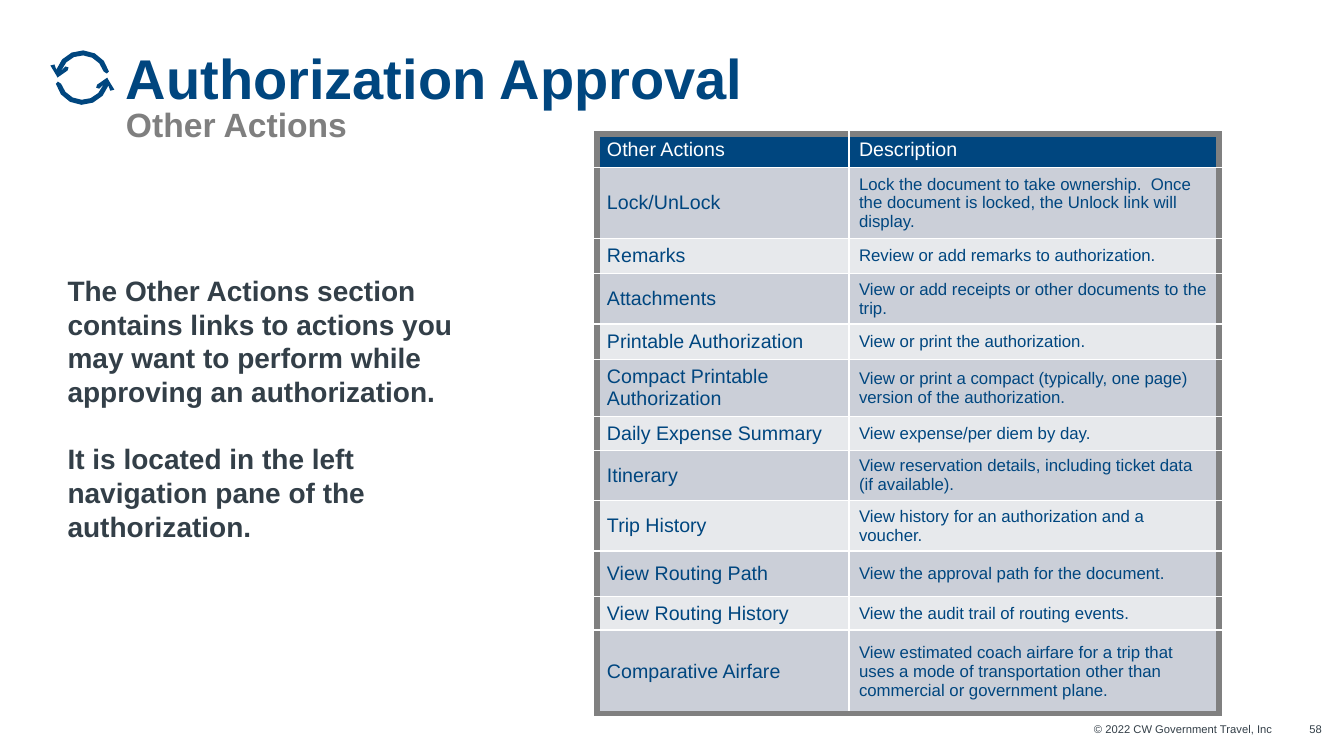
from math import cos, radians, sin

from lxml import etree
from pptx import Presentation
from pptx.dml.color import RGBColor
from pptx.enum.text import MSO_ANCHOR, PP_ALIGN
from pptx.oxml.ns import qn
from pptx.util import Inches, Pt

TOP, MIDDLE = MSO_ANCHOR.TOP, MSO_ANCHOR.MIDDLE
LEFT, RIGHT = PP_ALIGN.LEFT, PP_ALIGN.RIGHT

NAVY = RGBColor(0x00, 0x46, 0x7F)
GRAY = RGBColor(0x80, 0x80, 0x80)
SUBTITLE_GRAY = RGBColor(0x7F, 0x7F, 0x7F)
SLATE = RGBColor(0x33, 0x3F, 0x48)
WHITE = RGBColor(0xFF, 0xFF, 0xFF)
BAND_DARK = RGBColor(0xCB, 0xCF, 0xD8)
BAND_LIGHT = RGBColor(0xE7, 0xE9, 0xEC)

WIDTH, HEIGHT = 13.33, 7.5  # the grid: one column or row is one inch

# Name, description and row height of each action
ACTIONS = [
    ("Other Actions", "Description", 0.25),
    ("Lock/UnLock", "Lock the document to take ownership.  Once the document is "
     "locked, the Unlock link will display.", 0.63),
    ("Remarks", "Review or add remarks to authorization.", 0.35),
    ("Attachments", "View or add receipts or other documents to the trip.", 0.45),
    ("Printable Authorization", "View or print the authorization.", 0.35),
    ("Compact Printable Authorization", "View or print a compact (typically, "
     "one page) version of the authorization.", 0.48),
    ("Daily Expense Summary", "View expense/per diem by day.", 0.32),
    ("Itinerary", "View reservation details, including ticket data "
     "(if available).", 0.48),
    ("Trip History", "View history for an authorization and a voucher.", 0.45),
    ("View Routing Path", "View the approval path for the document.", 0.45),
    ("View Routing History", "View the audit trail of routing events.", 0.32),
    ("Comparative Airfare", "View estimated coach airfare for a trip that uses a "
     "mode of transportation other than commercial or government plane.", 0.83),
]


class SlideBuilder:
    """Holds the style and the current slide; lengths are grid units."""

    font_name = "Arial"

    def __init__(self, deck):
        self.slide = deck.slides.add_slide(deck.slide_layouts[6])

    def style(self, font, size, color, bold=False):
        font.name, font.size, font.bold = self.font_name, Pt(size), bold
        font.color.rgb = color

    def text(self, column, row, width, height, paragraphs, size, color,
             bold=False, align=LEFT, anchor=TOP, right_inset=0, gap=0, spacing=1.0):
        box = self.slide.shapes.add_textbox(
            *map(Inches, (column, row, width, height)))
        frame = box.text_frame
        frame.word_wrap, frame.vertical_anchor = True, anchor
        frame.margin_left = frame.margin_top = frame.margin_bottom = 0
        frame.margin_right = Inches(right_inset)
        for index, words in enumerate(paragraphs):
            para = frame.add_paragraph() if index else frame.paragraphs[0]
            para.text, para.alignment, para.line_spacing = words, align, spacing
            if index:
                para.space_before = Pt(gap)
            self.style(para.font, size, color, bold)
        return frame

    def outline(self, points, color):
        start, *rest = [(Inches(x), Inches(y)) for x, y in points]
        builder = self.slide.shapes.build_freeform(*start)
        builder.add_line_segments(rest, close=True)
        shape = builder.convert_to_shape()
        shape.shadow.inherit = False
        shape.fill.solid()
        shape.fill.fore_color.rgb = color
        shape.line.fill.background()

    def border(self, cell, side, color, points):
        line = etree.SubElement(cell._tc.get_or_add_tcPr(), qn(f"a:ln{side}"),
                                w=str(Pt(points)))
        fill = etree.SubElement(line, qn("a:solidFill"))
        etree.SubElement(fill, qn("a:srgbClr"), val=str(color))

    def cell(self, cell, words, size, color, fill, anchor, outer_sides):
        cell.text, cell.vertical_anchor = words, anchor
        self.style(cell.text_frame.paragraphs[0].font, size, color)
        for side in outer_sides:
            self.border(cell, side, GRAY, 4.5)
        cell.fill.solid()
        cell.fill.fore_color.rgb = fill

    def table(self, column, row, widths, records):
        heights = [record[-1] for record in records]
        table = self.slide.shapes.add_table(
            len(records), len(widths),
            *map(Inches, (column, row, sum(widths), sum(heights)))).table
        for index, width in enumerate(widths):
            table.columns[index].width = Inches(width)
        # The table style rules the inner lines in white; the outer frame is gray
        for r, (*texts, height) in enumerate(records):
            table.rows[r].height = Inches(height)
            header = r == 0
            band = BAND_DARK if r % 2 else BAND_LIGHT
            for c, words in enumerate(texts):
                outer_sides = "R" if c else "L"
                if header:
                    outer_sides += "T"
                elif r == len(records) - 1:
                    outer_sides += "B"
                self.cell(table.cell(r, c), words,
                          14 if header or c == 0 else 12,
                          WHITE if header else NAVY, NAVY if header else band,
                          TOP if header else MIDDLE, outer_sides)


def arc(center, radius, angles):
    return [(center[0] + radius * cos(radians(angle)),
             center[1] - radius * sin(radians(angle))) for angle in angles]


def main():
    deck = Presentation()
    deck.slide_width, deck.slide_height = Inches(WIDTH), Inches(HEIGHT)
    page = SlideBuilder(deck)

    # Cycle icon: one curved arrow and its half turn
    center = (0.817, 0.77)
    arrow = [(0.57, 0.77), (0.67, 0.7), (0.68, 0.67), (0.65, 0.66), (0.61, 0.7),
             *arc(center, 0.22, range(160, 12, -24)), (1.06, 0.73),
             *arc(center, 0.27, range(13, 164, 25)),
             (0.54, 0.64), (0.5, 0.65), (0.56, 0.75)]
    half_turn = [(2 * center[0] - x, 2 * center[1] - y) for x, y in arrow]
    for points in (arrow, half_turn):
        page.outline(points, NAVY)

    # Title and subtitle
    title = page.text(1.25, 0.53, 11.53, 0.92,
                      ["Authorization Approval\vOther Actions"], 40, NAVY,
                      bold=True, spacing=0.85)
    subtitle = title.paragraphs[0].runs[1]
    page.style(subtitle.font, 24, SUBTITLE_GRAY, bold=True)

    # Explanation
    page.text(0.67, 2.42, 4, 3.26, [
        "The Other Actions section contains links to actions you may want to "
        "perform while approving an authorization.",
        "It is located in the left navigation pane of the authorization.",
    ], 20, SLATE, bold=True, anchor=MIDDLE, gap=24)

    # Table of actions
    page.table(5.92, 1.33, [2.5, 3.67], ACTIONS)

    # Footer
    page.text(8.38, 7.17, 4.4, 0.14, ["© 2022 CW Government Travel, Inc"], 8, SLATE,
              align=RIGHT, right_inset=0.16)
    page.text(12.88, 7.17, 0.23, 0.14, ["58"], 8, SLATE, align=RIGHT)

    deck.save("out.pptx")


if __name__ == "__main__":
    main()
